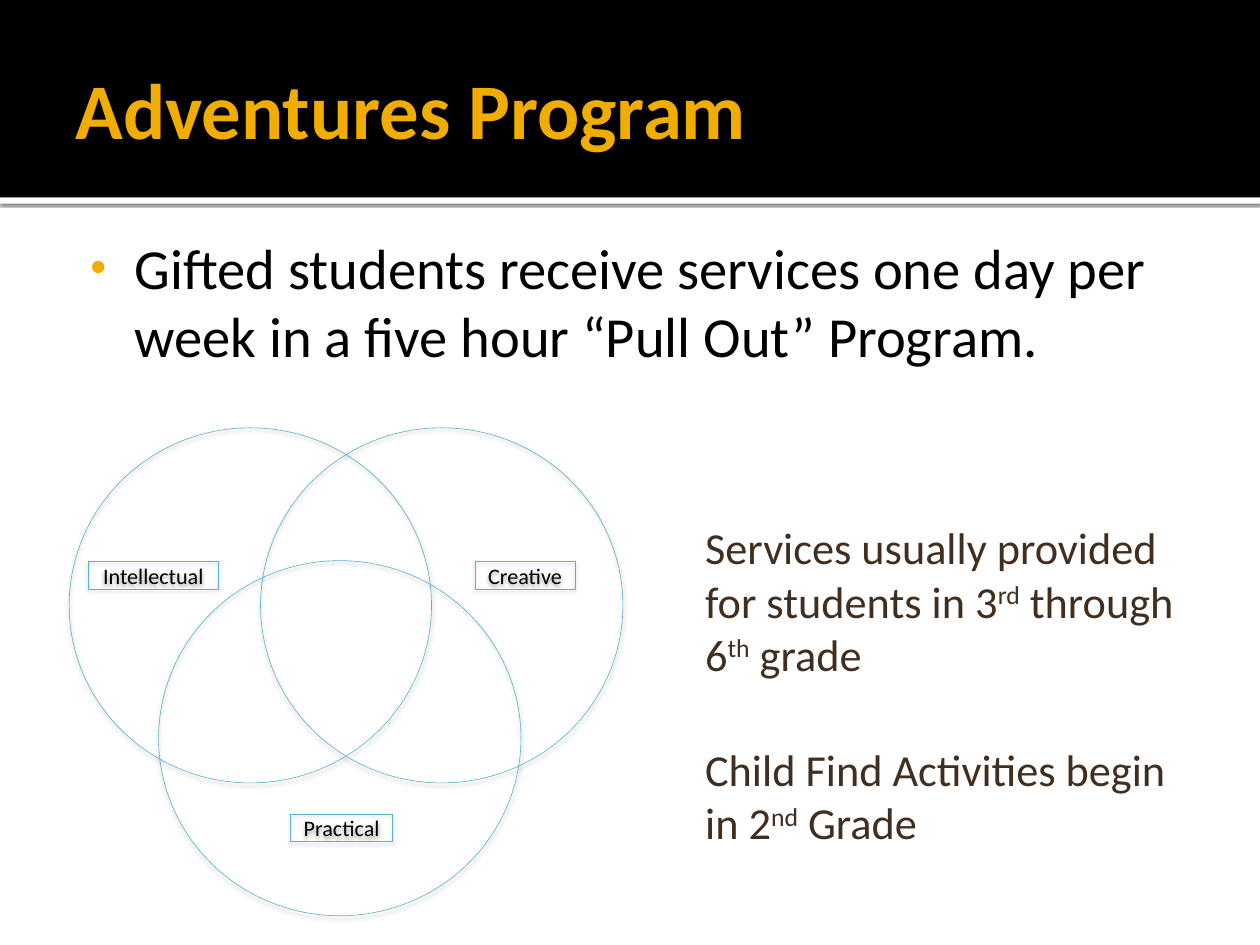
from dataclasses import dataclass
from typing import NamedTuple

from lxml.etree import SubElement
from pptx import Presentation
from pptx.dml.color import RGBColor
from pptx.enum.shapes import MSO_SHAPE as Preset
from pptx.enum.text import MSO_ANCHOR as Anchor, MSO_AUTO_SIZE as AutoSize, PP_ALIGN as Align
from pptx.oxml.ns import qn
from pptx.util import Inches, Pt


@dataclass(frozen=True)
class Theme:
    font: str = "Calibri"
    gold: str = "F0AD00"
    black: str = "000000"
    white: str = "FFFFFF"
    teal: str = "5BB3CA"
    brown: str = "422E1F"
    title_size: int = 64
    body_size: int = 46
    note_size: int = 36
    label_size: int = 18
    outline: float = 0.5


class Area(NamedTuple):
    """Left, top, width and height in percent of the slide."""
    left: float
    top: float
    width: float
    height: float


class Shadow(NamedTuple):
    opacity: int
    blur: float
    distance: float


class Label(NamedTuple):
    text: str
    area: Area


class Note(NamedTuple):
    area: Area
    spans: tuple[str, ...]


THEME = Theme()
WIDTH, HEIGHT = Inches(14.22), Inches(10.67)
BAND_HEIGHT = 20.9
BAR_SHADOW = Shadow(60, 2.5, 0.8)
VENN_SHADOW = Shadow(38, 3.5, 2)
CIRCLE_WIDTH, CIRCLE_HEIGHT = 28.76, 37.58
CIRCLE_CORNERS = ((5.49, 45.27), (20.68, 45.27), (12.59, 59.33))
LABELS = (
    Label("Intellectual", Area(7.03, 59.42, 10.27, 2.9)),
    Label("Creative", Area(37.69, 59.42, 7.95, 2.9)),
    Label("Practical", Area(23.07, 86.13, 8.09, 2.9)),
)
NOTES = (
    Note(Area(55.27, 54.64, 41, 18),
         ("Services usually provided for students in 3", "rd", " through 6", "th", " grade")),
    Note(Area(55.27, 78.07, 39.87, 12.28),
         ("Child Find Activities begin in 2", "nd", " Grade")),
)


def place(area: Area) -> tuple[int, int, int, int]:
    return (int(WIDTH * area.left / 100), int(HEIGHT * area.top / 100),
            int(WIDTH * area.width / 100), int(HEIGHT * area.height / 100))


def style(paragraph, size: int, color: str, bold: bool = False) -> None:
    font = paragraph.font
    font.name, font.size, font.bold = THEME.font, Pt(size), bold
    font.color.rgb = RGBColor.from_string(color)


def set_insets(frame, left: float, top: float, right: float, bottom: float) -> None:
    frame.margin_left, frame.margin_top = Inches(left), Inches(top)
    frame.margin_right, frame.margin_bottom = Inches(right), Inches(bottom)


def add_shadow(shape, shadow: Shadow) -> None:
    effects = shape.element.spPr.find(qn("a:effectLst"))
    outer = SubElement(effects, qn("a:outerShdw"), blurRad=str(Pt(shadow.blur)),
                       dist=str(Pt(shadow.distance)), dir="5400000", rotWithShape="0")
    color = SubElement(outer, qn("a:srgbClr"), val=THEME.black)
    SubElement(color, qn("a:alpha"), val=str(shadow.opacity * 1000))


def draw_band(page, area: Area, color: str):
    band = page.shapes.add_shape(Preset.RECTANGLE, *place(area))
    band.shadow.inherit = False
    band.fill.solid()
    band.fill.fore_color.rgb = RGBColor.from_string(color)
    band.line.fill.background()
    return band


def draw_outline(group, preset: Preset, area: Area):
    shape = group.shapes.add_shape(preset, *place(area))
    shape.fill.background()
    shape.line.color.rgb = RGBColor.from_string(THEME.teal)
    shape.line.width = Pt(THEME.outline)
    shape.shadow.inherit = False
    add_shadow(shape, VENN_SHADOW)
    return shape


def draw_label(group, label: Label) -> None:
    frame = draw_outline(group, Preset.RECTANGLE, label.area).text_frame
    set_insets(frame, 0, 0, 0, 0)
    frame.word_wrap, frame.vertical_anchor = True, Anchor.MIDDLE
    frame.auto_size = AutoSize.SHAPE_TO_FIT_TEXT
    para = frame.paragraphs[0]
    para.text, para.alignment = label.text, Align.CENTER
    style(para, THEME.label_size, THEME.black)


def add_text(page, area: Area):
    frame = page.shapes.add_textbox(*place(area)).text_frame
    frame.word_wrap = True
    return frame


def draw_title(page) -> None:
    frame = add_text(page, Area(5, 2.25, 59.64, 18.28))
    set_insets(frame, 0.14, 0.07, 0.07, 0.07)
    frame.vertical_anchor = Anchor.MIDDLE
    para = frame.paragraphs[0]
    para.text = "Adventures Program"
    style(para, THEME.title_size, THEME.gold, bold=True)


def draw_body(page) -> None:
    frame = add_text(page, Area(5.27, 23.34, 89.45, 28.77))
    set_insets(frame, 0.09, 0.14, 0.14, 0.07)
    para = frame.paragraphs[0]
    para.text = "Gifted students receive services one day per week in a five hour “Pull Out” Program."
    props = para._p.get_or_add_pPr()
    props.set("marL", str(Inches(0.68)))
    props.set("indent", str(Inches(-0.5)))
    SubElement(SubElement(props, qn("a:buClr")), qn("a:srgbClr"), val=THEME.gold)
    SubElement(props, qn("a:buSzPct"), val="80000")
    SubElement(props, qn("a:buFont"), typeface="Arial")
    SubElement(props, qn("a:buChar"), char="•")
    style(para, THEME.body_size, THEME.black)


def draw_note(page, note: Note) -> None:
    frame = add_text(page, note.area)
    frame.auto_size = AutoSize.SHAPE_TO_FIT_TEXT
    para = frame.paragraphs[0]
    for index, text in enumerate(note.spans):
        span = para.add_run()
        span.text = text
        if index % 2:
            span._r.get_or_add_rPr().set("baseline", "30000")
    style(para, THEME.note_size, THEME.brown)


def main() -> None:
    deck = Presentation()
    deck.slide_width, deck.slide_height = WIDTH, HEIGHT
    page = deck.slides.add_slide(deck.slide_layouts[6])
    bar = draw_band(page, Area(0, BAND_HEIGHT, 100, 0.66), THEME.white)
    add_shadow(bar, BAR_SHADOW)
    draw_band(page, Area(0, 0, 100, BAND_HEIGHT), THEME.black)
    draw_title(page)
    draw_body(page)
    venn = page.shapes.add_group_shape()
    for left, top in CIRCLE_CORNERS:
        draw_outline(venn, Preset.OVAL, Area(left, top, CIRCLE_WIDTH, CIRCLE_HEIGHT))
    for label in LABELS:
        draw_label(venn, label)
    for note in NOTES:
        draw_note(page, note)
    deck.save("out.pptx")


if __name__ == "__main__":
    main()
